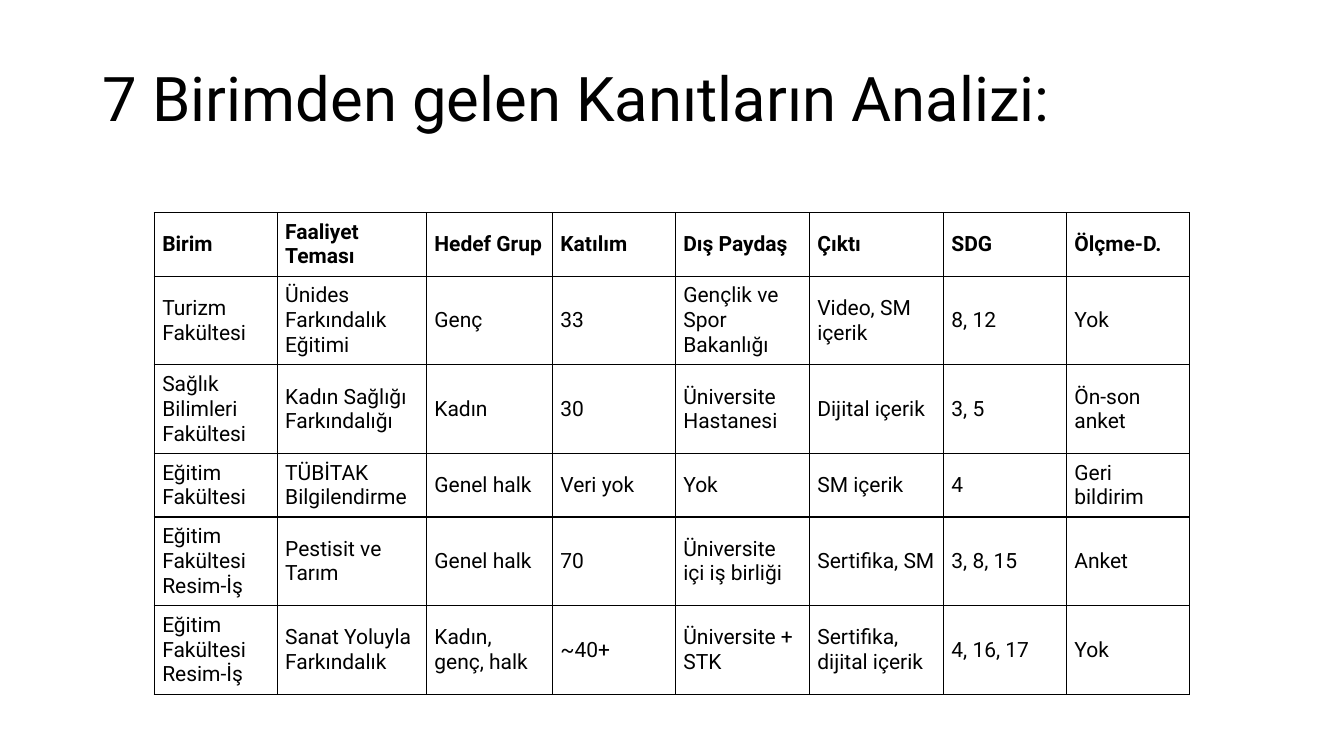
from lxml.etree import SubElement
from pptx import Presentation
from pptx.dml.color import RGBColor
from pptx.enum.text import MSO_ANCHOR as Anchor
from pptx.oxml.ns import qn
from pptx.util import Pt

FONT = "Roboto"
BLACK = "000000"
TITLE = "7 Birimden gelen Kanıtların Analizi:"
COLUMN_WIDTHS = [87.84, 106.56, 90, 87.84, 95.76, 95.76, 87.84, 87.84]
TWO_LINE_ROW, THREE_LINE_ROW = 45.36, 63.36
ROW_HEIGHTS = [TWO_LINE_ROW, THREE_LINE_ROW, THREE_LINE_ROW,
               TWO_LINE_ROW, THREE_LINE_ROW, THREE_LINE_ROW]
EVIDENCE = [
    ["Birim", "Faaliyet Teması", "Hedef Grup", "Katılım",
     "Dış Paydaş", "Çıktı", "SDG", "Ölçme-D."],
    ["Turizm Fakültesi", "Ünides Farkındalık Eğitimi", "Genç", "33",
     "Gençlik ve Spor Bakanlığı", "Video, SM içerik", "8, 12", "Yok"],
    ["Sağlık Bilimleri Fakültesi", "Kadın Sağlığı Farkındalığı", "Kadın", "30",
     "Üniversite Hastanesi", "Dijital içerik", "3, 5", "Ön-son anket"],
    ["Eğitim Fakültesi", "TÜBİTAK Bilgilendirme", "Genel halk", "Veri yok",
     "Yok", "SM içerik", "4", "Geri bildirim"],
    ["Eğitim Fakültesi Resim-İş", "Pestisit ve Tarım", "Genel halk", "70",
     "Üniversite içi iş birliği", "Sertifika, SM", "3, 8, 15", "Anket"],
    ["Eğitim Fakültesi Resim-İş", "Sanat Yoluyla Farkındalık", "Kadın, genç, halk", "~40+",
     "Üniversite + STK", "Sertifika, dijital içerik", "4, 16, 17", "Yok"],
]


def color(hex_value):
    return RGBColor.from_string(hex_value)


def format_runs(paragraph, size, bold=False):
    for run in paragraph.runs:
        run.font.name = FONT
        run.font.size = Pt(size)
        run.font.bold = bold
        run.font.color.rgb = color(BLACK)


def add_title(slide, text):
    box = slide.shapes.add_textbox(Pt(66.24), Pt(20.16), Pt(827.28), Pt(79.92))
    frame = box.text_frame
    frame.word_wrap = True
    frame.vertical_anchor = Anchor.BOTTOM
    frame.text = text
    paragraph = frame.paragraphs[0]
    paragraph.line_spacing = 0.9
    format_runs(paragraph, 44)


def set_borders(cell, width, hex_value):
    properties = cell._tc.get_or_add_tcPr()
    for side in ("a:lnL", "a:lnR", "a:lnT", "a:lnB"):
        line = SubElement(properties, qn(side), w=str(Pt(width)))
        fill = SubElement(line, qn("a:solidFill"))
        SubElement(fill, qn("a:srgbClr"), val=hex_value)


def fill_cell(cell, text, bold):
    cell.margin_left = cell.margin_right = Pt(5.76)
    cell.margin_top = cell.margin_bottom = Pt(2.88)
    cell.vertical_anchor = Anchor.MIDDLE
    cell.text_frame.text = text
    format_runs(cell.text_frame.paragraphs[0], 15, bold)
    set_borders(cell, 1, BLACK)
    cell.fill.background()


def add_evidence_table(slide, rows):
    table = slide.shapes.add_table(
        len(rows), len(COLUMN_WIDTHS), Pt(110.16), Pt(151.92),
        Pt(sum(COLUMN_WIDTHS)), Pt(sum(ROW_HEIGHTS))).table
    table.horz_banding = False
    for column, width in zip(table.columns, COLUMN_WIDTHS):
        column.width = Pt(width)
    for row_index, texts in enumerate(rows):
        table.rows[row_index].height = Pt(ROW_HEIGHTS[row_index])
        for column_index, text in enumerate(texts):
            fill_cell(table.cell(row_index, column_index), text, bold=row_index == 0)


def main():
    presentation = Presentation()
    presentation.slide_width = Pt(960)
    presentation.slide_height = Pt(540)
    slide = presentation.slides.add_slide(presentation.slide_layouts[6])
    add_title(slide, TITLE)
    add_evidence_table(slide, EVIDENCE)
    presentation.save("out.pptx")


if __name__ == "__main__":
    main()
